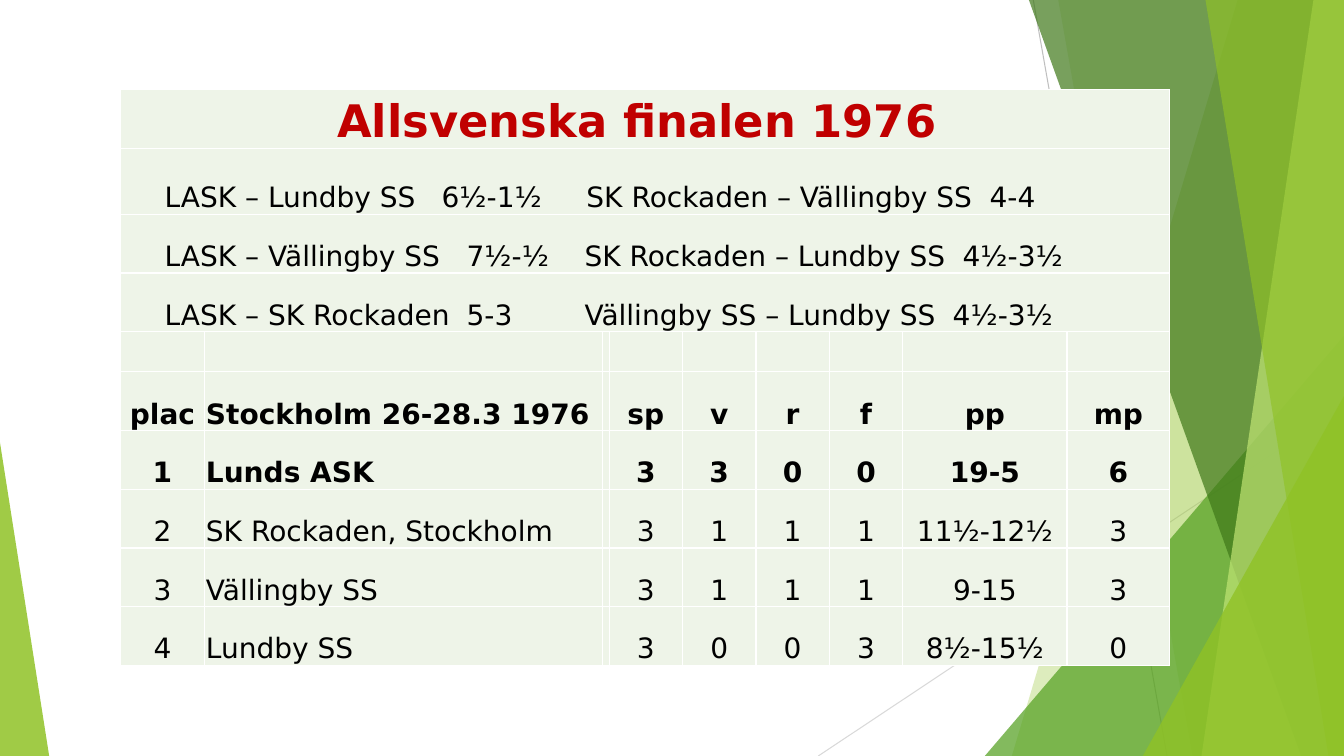
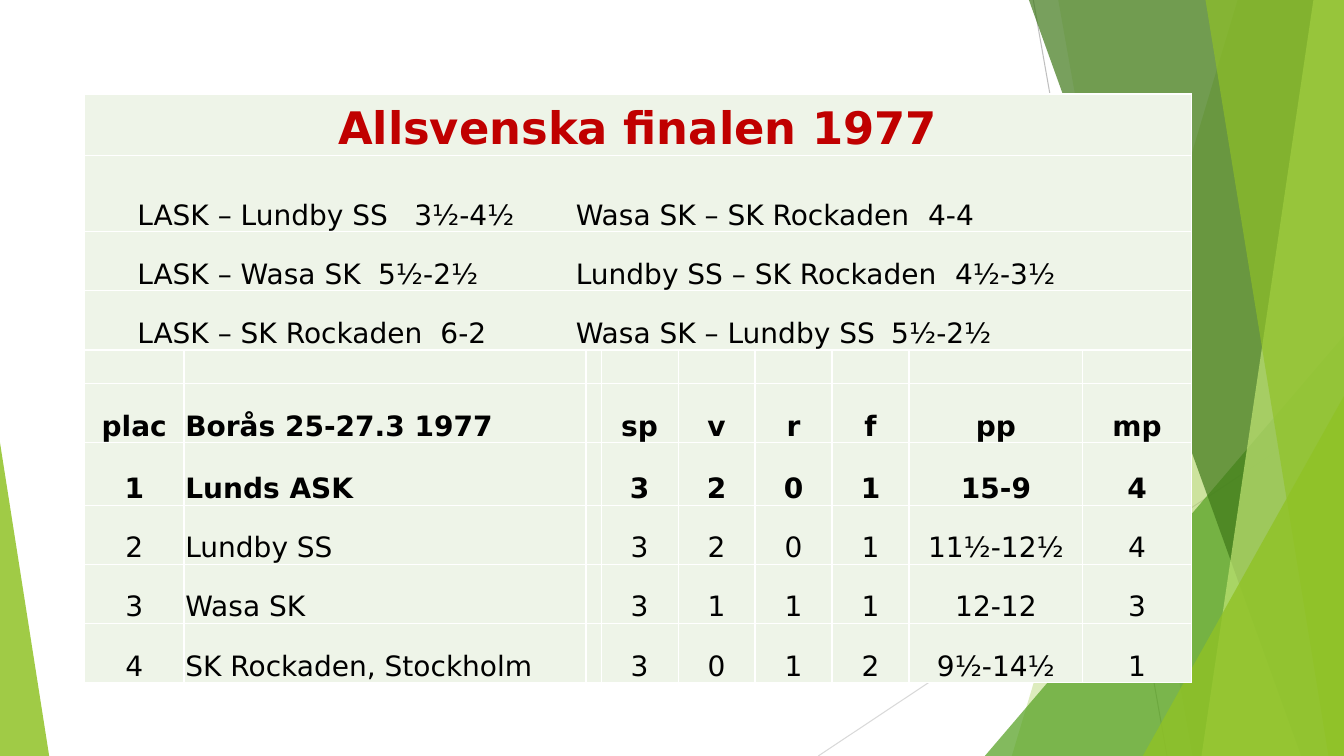
from lxml.etree import SubElement
from pptx import Presentation
from pptx.dml.color import RGBColor
from pptx.enum.shapes import MSO_CONNECTOR, MSO_SHAPE
from pptx.enum.text import MSO_ANCHOR, PP_ALIGN
from pptx.oxml.ns import qn
from pptx.util import Cm, Pt

WIDE, HIGH = 33.87, 19.05
HEAD = ["sp", "v", "r", "f", "pp", "mp"]


def color(code):
    return RGBColor.from_string(code)


class Deck:
    """Holds the shared style and the current slide."""

    font = "DejaVu Sans"
    lime, green, dark, pale = "90C226", "54A021", "3F7819", "C0E474"
    red, black, white, cream = "C00000", "000000", "FFFFFF", "EEF4E8"
    pad = 0.03

    def __init__(self):
        self.prs = Presentation()
        self.prs.slide_width, self.prs.slide_height = Cm(WIDE), Cm(HIGH)

    def start(self):
        self.slide = self.prs.slides.add_slide(self.prs.slide_layouts[6])
        self.shapes = self.slide.shapes
        self.line(26.04, 0, 29.41, HIGH, "BFBFBF")
        self.line(WIDE, 10.24, 20.62, HIGH, "D9D9D9")
        self.band(31.19, 25.5, self.lime, 30)
        self.band(26.67, 30.05, self.lime, 20)
        self.wedge(24.82, 8.46, WIDE, 1, self.green, 72)
        self.band(25.93, 32.79, self.dark, 70)
        self.band(33.1, 30.28, self.pale, 70)
        self.band(30.38, 33.48, self.lime, 65)
        self.wedge(28.8, 9.98, WIDE, 1, self.lime, 80)
        self.wedge(0, 11.15, 1.24, 0, self.lime, 85)

    def line(self, x1, y1, x2, y2, code):
        line = self.shapes.add_connector(
            MSO_CONNECTOR.STRAIGHT, Cm(x1), Cm(y1), Cm(x2), Cm(y2))
        line.line.color.rgb = color(code)
        line.line.width = Pt(0.75)
        SubElement(line.element.spPr, qn("a:effectLst"))

    def paint(self, shape, code, alpha):
        shape.shadow.inherit = False
        shape.line.fill.background()
        shape.fill.solid()
        shape.fill.fore_color.rgb = color(code)
        for tint in shape.element.spPr.iter(qn("a:srgbClr")):
            SubElement(tint, qn("a:alpha"), val=str(alpha * 1000))

    def band(self, top, base, code, alpha):
        pen = self.shapes.build_freeform(Cm(top), 0)
        spots = [(WIDE, 0), (WIDE, HIGH), (base, HIGH)]
        pen.add_line_segments([(Cm(x), Cm(y)) for x, y in spots])
        self.paint(pen.convert_to_shape(), code, alpha)

    def wedge(self, left, top, right, peak, code, alpha):
        shape = self.shapes.add_shape(
            MSO_SHAPE.ISOSCELES_TRIANGLE, Cm(left), Cm(top),
            Cm(right - left), Cm(HIGH - top))
        shape.adjustments[0] = peak
        self.paint(shape, code, alpha)

    def frame(self, cell):
        cell.margin_left = cell.margin_right = cell.margin_top = Cm(self.pad)
        cell.margin_bottom = 0
        cell.vertical_anchor = MSO_ANCHOR.BOTTOM
        props = cell._tc.get_or_add_tcPr()
        for side in ("a:lnL", "a:lnR", "a:lnT", "a:lnB"):
            edge = SubElement(props, qn(side), w=str(Pt(1)))
            fill = SubElement(edge, qn("a:solidFill"))
            SubElement(fill, qn("a:srgbClr"), val=self.white)
        cell.fill.solid()
        cell.fill.fore_color.rgb = color(self.cream)

    def label(self, cell, text, size=20, bold=False, code=black,
              mid=True, stops=()):
        para = cell.text_frame.paragraphs[0]
        para.text = text
        para.alignment = PP_ALIGN.CENTER if mid else PP_ALIGN.LEFT
        if stops:
            tabs = SubElement(para._p.get_or_add_pPr(), qn("a:tabLst"))
            for stop in stops:
                SubElement(tabs, qn("a:tab"), pos=str(Cm(stop)), algn="l")
        font = para.font
        font.name, font.size, font.bold = self.font, Pt(size), bold
        font.color.rgb = color(code)

    def table(self, left, top, cols, rows, title, dent, games, ranks):
        grid = self.shapes.add_table(
            len(rows), len(cols), Cm(left), Cm(top),
            Cm(sum(cols)), Cm(sum(rows))).table
        grid.first_row = grid.horz_banding = False
        for col, wide in zip(grid.columns, cols):
            col.width = Cm(wide)
        for row, high in zip(grid.rows, rows):
            row.height = Cm(high)
        for cell in grid.iter_cells():
            self.frame(cell)
            self.label(cell, "", 10)
        last = len(cols) - 1
        for row in range(len(games) + 1):
            grid.cell(row, 0).merge(grid.cell(row, last))
        self.label(grid.cell(0, 0), title, 32, True, self.red)
        for row, (text, stops) in enumerate(games, 1):
            cell = grid.cell(row, 0)
            cell.margin_left = Cm(dent)
            self.label(cell, text, mid=False, stops=stops)
        first = len(games) + 2
        for row, (place, team, *marks) in enumerate(ranks, first):
            for col, text in enumerate([place, team, "", *marks]):
                if text:
                    self.label(grid.cell(row, col), text,
                               bold=row < first + 2, mid=col != 1)


def main():
    deck = Deck()
    deck.start()
    deck.table(
        3.03, 2.26,
        [2.13, 10.03, 0.15] + [1.85] * 4 + [4.14, 2.59],
        [1.48, 1.66, 1.48, 1.48, 1.01] + [1.48] * 5,
        "Allsvenska finalen 1976 ", 1.12,
        [("LASK – Lundby SS\t6½-1½\tSK Rockaden – Vällingby SS\t4-4",
          (6.98, 10.63, 20.79)),
         ("LASK – Vällingby SS\t7½-½\tSK Rockaden – Lundby SS\t4½-3½",
          (7.61, 10.58, 20.11)),
         ("LASK – SK Rockaden\t5-3\tVällingby SS – Lundby SS\t4½-3½",
          (7.61, 10.58, 19.86))],
        [["plac", "Stockholm 26-28.3 1976", *HEAD],
         ["1", "Lunds ASK", "3", "3", "0", "0", "19-5", "6"],
         ["2", "SK Rockaden, Stockholm", "3", "1", "1", "1", "11½-12½", "3"],
         ["3", "Vällingby SS", "3", "1", "1", "1", "9-15", "3"],
         ["4", "Lundby SS", "3", "0", "0", "3", "8½-15½", "0"]])
    deck.start()
    deck.table(
        2.13, 2.37,
        [2.51, 10.13, 0.38] + [1.94] * 4 + [4.38, 2.73],
        [1.54, 1.93, 1.49, 1.49, 0.85, 1.49, 1.57] + [1.49] * 3,
        "Allsvenska finalen 1977", 1.33,
        [("LASK – Lundby SS\t3½-4½\tWasa SK – SK Rockaden\t4-4",
          (6.98, 11.05, 19.93)),
         ("LASK – Wasa SK\t5½-2½\tLundby SS – SK Rockaden\t4½-3½",
          (6.07, 11.05, 20.61)),
         ("LASK – SK Rockaden\t6-2\tWasa SK – Lundby SS\t5½-2½",
          (7.64, 11.05, 19))],
        [["plac", "Borås 25-27.3 1977", *HEAD],
         ["1", "Lunds ASK", "3", "2", "0", "1", "15-9", "4"],
         ["2", "Lundby SS", "3", "2", "0", "1", "11½-12½", "4"],
         ["3", "Wasa SK", "3", "1", "1", "1", "12-12", "3"],
         ["4", "SK Rockaden, Stockholm", "3", "0", "1", "2", "9½-14½", "1"]])
    deck.prs.save("out.pptx")


if __name__ == "__main__":
    main()
